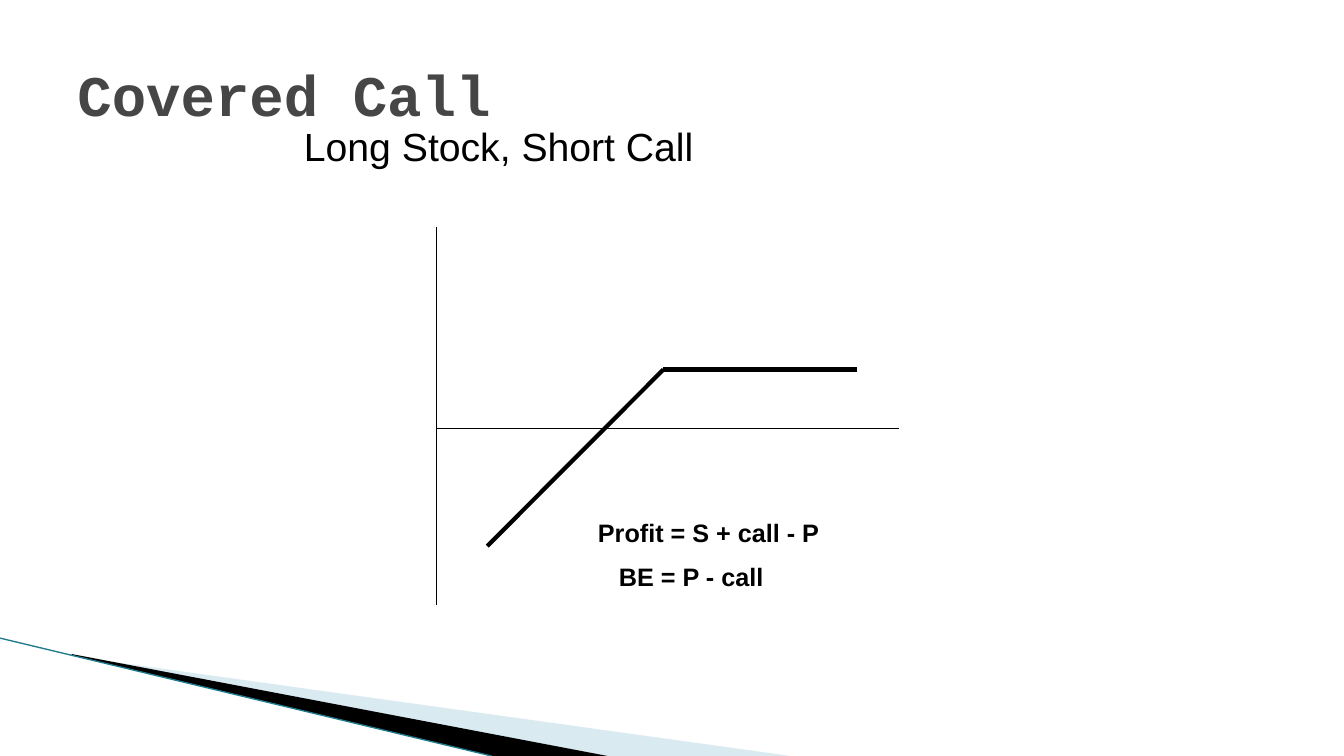
"""Builds the covered call payoff slide."""
from lxml.etree import SubElement
from pptx import Presentation
from pptx.dml.color import RGBColor
from pptx.enum.shapes import MSO_CONNECTOR
from pptx.enum.text import MSO_ANCHOR
from pptx.oxml.ns import qn
from pptx.util import Cm, Pt

COLORS = {"title": "464646", "ink": "000000", "pale": "A0CBDC", "teal": "1F7A8C"}

prs = Presentation()
prs.slide_width, prs.slide_height = Cm(33.87), Cm(19.05)
s = prs.slides.add_slide(prs.slide_layouts[6])


def add_line(x1, y1, x2, y2, color, width):
    c = s.shapes.add_connector(MSO_CONNECTOR.STRAIGHT, Cm(x1), Cm(y1), Cm(x2), Cm(y2))
    c.line.color.rgb = RGBColor.from_string(COLORS[color])
    c.line.width = Pt(width)
    SubElement(c._element.spPr, qn("a:effectLst"))


def add_text(x, y, w, h, lines, font, size, color, bold):
    tf = s.shapes.add_textbox(Cm(x), Cm(y), Cm(w), Cm(h)).text_frame
    tf.word_wrap = True
    tf.text = "\n".join(lines)
    for p in tf.paragraphs:
        f = p.runs[0].font
        f.name, f.size, f.bold = font, Pt(size), bold
        f.color.rgb = RGBColor.from_string(COLORS[color])
    return tf


swooshes = [
    ("pale", [(1.85, 16.54), (19.92, 19.05), (15.28, 19.05), (1.85, 16.51)]),
    ("ink", [(1.8, 16.48), (15.31, 19.05), (12.4, 19.05), (1.83, 16.51)]),
]
for color, points in swooshes:
    start, *rest = [(Cm(x), Cm(y)) for x, y in points]
    builder = s.shapes.build_freeform(*start)
    builder.add_line_segments(rest, close=True)
    sp = builder.convert_to_shape()
    sp.shadow.inherit = False
    sp.fill.solid()
    sp.fill.fore_color.rgb = RGBColor.from_string(COLORS[color])
    sp.line.fill.background()
    if color == "pale":
        fill = sp._element.spPr.find(qn("a:solidFill"))
        SubElement(fill[0], qn("a:alpha"), val="40000")
add_line(0, 16.08, 12.39, 19.05, "teal", 0.95)

title = add_text(1.7, 0.76, 30.48, 3.18, ["Covered Call"], "Courier New", 41, "title", True)
title.vertical_anchor = MSO_ANCHOR.MIDDLE
add_text(7.41, 2.96, 19.9, 1.45, ["Long Stock, Short Call"], "Arial", 28, "ink", False)

axes = [(11, 5.72, 11, 15.24), (11, 10.8, 22.65, 10.8)]
payoff = [(12.28, 13.76, 16.72, 9.31), (16.72, 9.31, 21.59, 9.31)]
for segments, width in ((axes, 0.75), (payoff, 3)):
    for segment in segments:
        add_line(*segment, "ink", width)

formulas = add_text(14.82, 12.91, 10.16, 2.18,
                    ["Profit = S + call - P", "BE = P - call"], "Arial", 18, "ink", True)
p = formulas.paragraphs[1]
p.space_before = Pt(10)
p._p.get_or_add_pPr().set("marL", str(Cm(0.53)))

prs.save("out.pptx")
